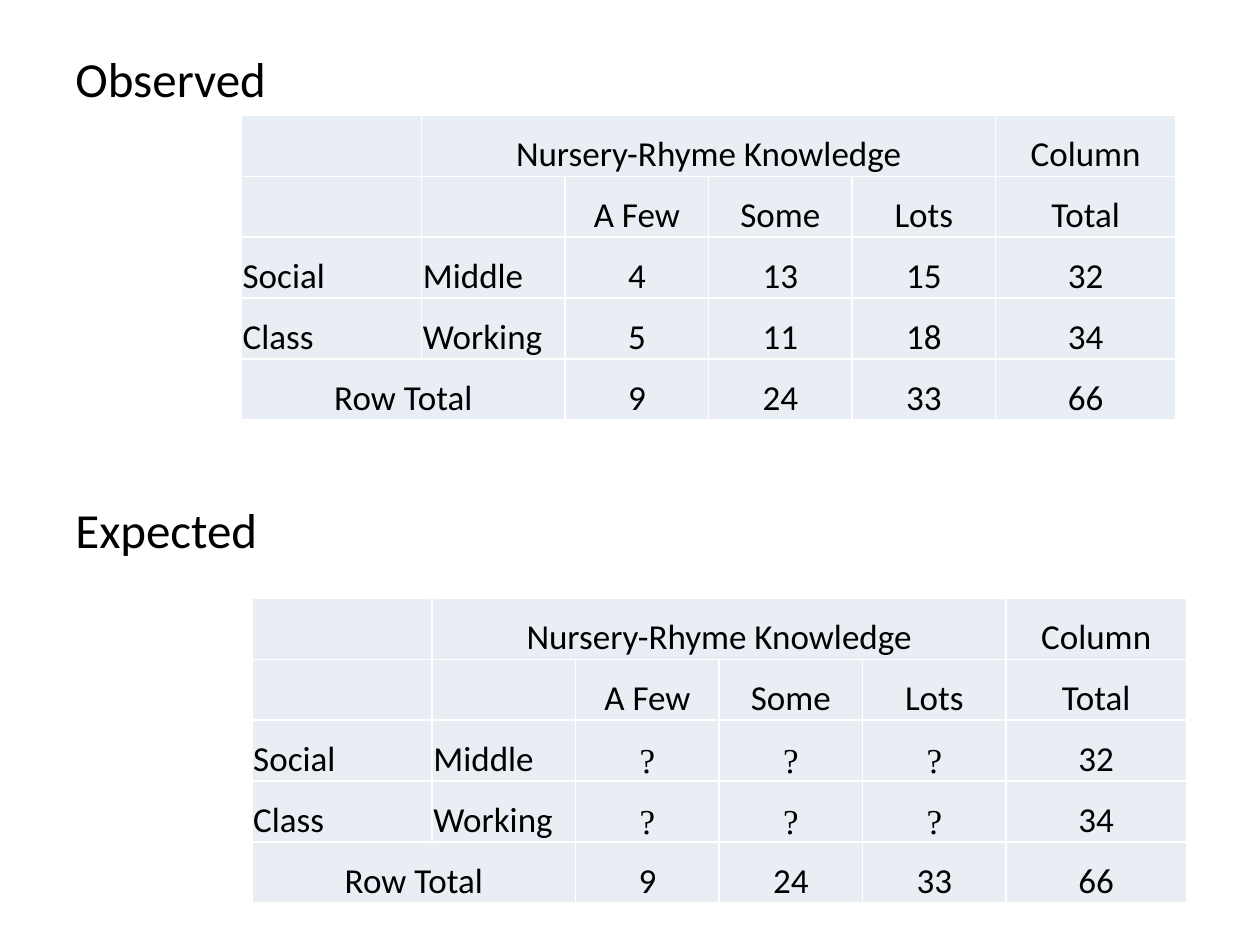
from lxml.etree import SubElement
from pptx import Presentation
from pptx.dml.color import RGBColor
from pptx.enum.text import MSO_ANCHOR as Anchor, MSO_AUTO_SIZE as AutoSize, PP_ALIGN as Align
from pptx.oxml.ns import qn
from pptx.util import Pt

# Content: None marks a cell covered by the merged cell to its left
HEADER = [
    ["", "Nursery-Rhyme Knowledge", None, None, None, "Column"],
    ["", "", "A Few", "Some", "Lots", "Total"],
]
FOOTER = [["Row Total", None, "9", "24", "33", "66"]]
SECTIONS = [
    dict(heading="Observed", heading_top=24, table_at=(138, 66),
         counts=[["4", "13", "15"], ["5", "11", "18"]]),
    dict(heading="Expected", heading_top=282, table_at=(144, 342),
         counts=[["?"] * 3] * 2),
]
CLASSES = [("Social", "Middle", "32"), ("Class", "Working", "34")]


class Theme:
    font, unknown_font = "Calibri", "Times New Roman"
    heading_size, cell_size = Pt(28), Pt(20)
    text = RGBColor(0x00, 0x00, 0x00)
    cell = RGBColor(0xE9, 0xED, 0xF4)
    border, border_width = "FFFFFF", Pt(1)


# Layout, in points
PAGE = (720, 540)
HEADING_LEFT, HEADING_SIZE = 36, (624, 41)
COLUMNS = [103, 82, 82, 82, 82, 103]
ROW_HEIGHT = 34.8
CELL_MARGIN = 0.7


def style_text(para, size, font=Theme.font):
    for span in para.runs:
        span.font.name, span.font.size = font, size
        span.font.color.rgb = Theme.text


def add_heading(page, text, top):
    box = page.shapes.add_textbox(Pt(HEADING_LEFT), Pt(top), *map(Pt, HEADING_SIZE))
    frame = box.text_frame
    frame.word_wrap = True
    frame.auto_size = AutoSize.SHAPE_TO_FIT_TEXT
    frame.text = text
    style_text(frame.paragraphs[0], Theme.heading_size)


def add_borders(cell):
    properties = cell._tc.get_or_add_tcPr()
    for side in ("a:lnL", "a:lnR", "a:lnT", "a:lnB"):
        line = SubElement(properties, qn(side), w=str(Theme.border_width))
        fill = SubElement(line, qn("a:solidFill"))
        SubElement(fill, qn("a:srgbClr"), val=Theme.border)


def format_cell(cell, text, align):
    add_borders(cell)
    cell.fill.solid()
    cell.fill.fore_color.rgb = Theme.cell
    cell.margin_left = cell.margin_right = cell.margin_top = Pt(CELL_MARGIN)
    cell.margin_bottom = 0
    cell.vertical_anchor = Anchor.BOTTOM
    cell.text = text or ""
    para = cell.text_frame.paragraphs[0]
    para.alignment = align
    style_text(para, Theme.cell_size, Theme.unknown_font if text == "?" else Theme.font)


def add_count_table(page, counts, position):
    body = [[group, name, *values, total]
            for (group, name, total), values in zip(CLASSES, counts)]
    rows = HEADER + body + FOOTER
    table = page.shapes.add_table(
        len(rows), len(COLUMNS), *map(Pt, position),
        Pt(sum(COLUMNS)), Pt(ROW_HEIGHT * len(rows))).table
    table.first_row = table.horz_banding = False
    for column, width in zip(table.columns, COLUMNS):
        column.width = Pt(width)

    for r, row in enumerate(rows):
        table.rows[r].height = Pt(ROW_HEIGHT)
        for c, text in enumerate(row):
            is_label = row in body and c < 2
            format_cell(table.cell(r, c), text, Align.LEFT if is_label else Align.CENTER)
        # Merge each run of covered cells into the cell before it
        covered = [c for c, text in enumerate(row) if text is None]
        if covered:
            table.cell(r, covered[0] - 1).merge(table.cell(r, covered[-1]))


def main():
    deck = Presentation()
    deck.slide_width, deck.slide_height = map(Pt, PAGE)
    page = deck.slides.add_slide(deck.slide_layouts.get_by_name("Blank"))
    for section in SECTIONS:
        add_heading(page, section["heading"], section["heading_top"])
        add_count_table(page, section["counts"], section["table_at"])
    deck.save("out.pptx")


if __name__ == "__main__":
    main()
